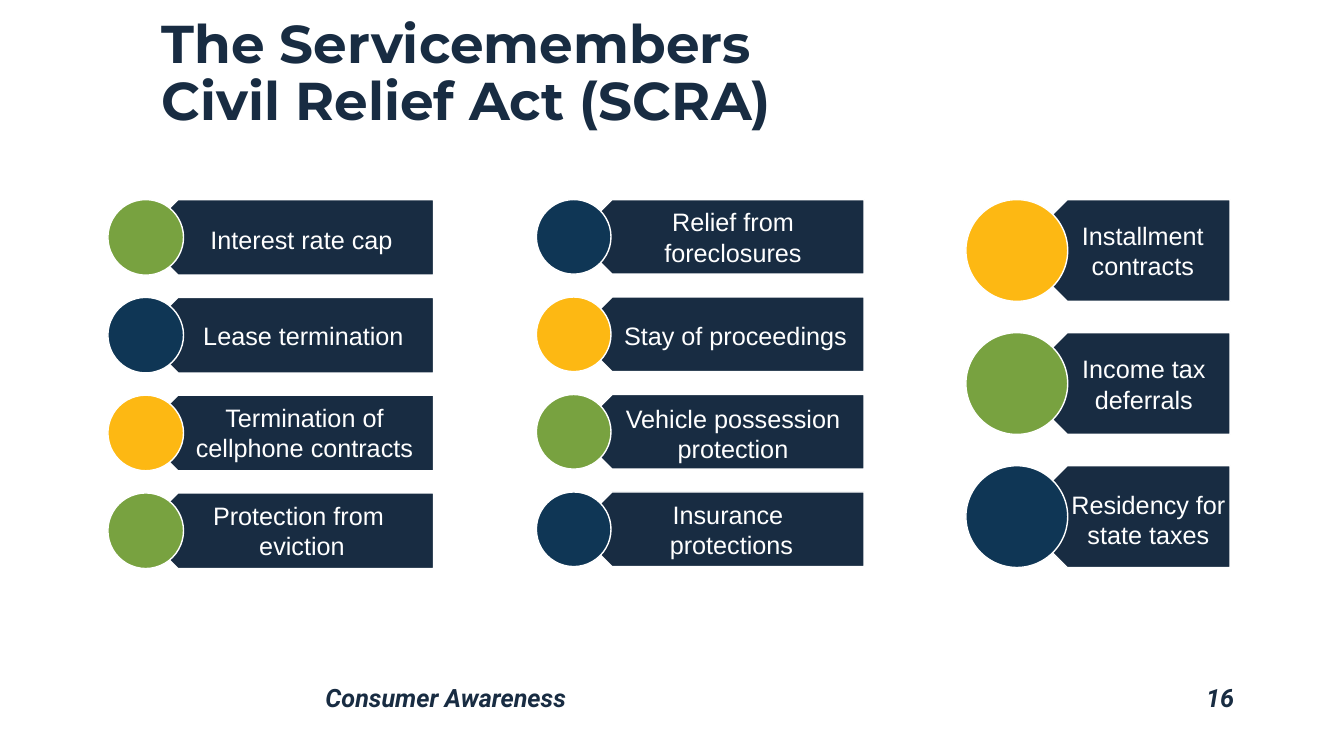
from pptx import Presentation
from pptx.dml.color import RGBColor
from pptx.enum.shapes import MSO_SHAPE
from pptx.enum.text import MSO_ANCHOR, MSO_AUTO_SIZE, PP_ALIGN
from pptx.util import Inches, Pt

NAVY, BLUE, GREEN, GOLD, WHITE = "182C42", "0F3655", "78A240", "FDB813", "FFFFFF"
TOP, MIDDLE = MSO_ANCHOR.TOP, MSO_ANCHOR.MIDDLE

# Content
TITLE = "The Servicemembers \vCivil Relief Act (SCRA)"
FOOTER = "Consumer Awareness"
PAGE_NUMBER = "16"
FIRST_ROW = 1.98

# Each protection: circle colour, label, label box (left, top, width, height), anchor
COLUMNS = [
    {"circle_left": 1.07, "circle": 0.75, "banner_left": 1.39, "banner_width": 2.91, "pitch": 0.97,
     "protections": [
         (GREEN, "Interest rate cap", (1.69, 2, 2.6, 0.75), MIDDLE),
         (BLUE, "Lease termination", (1.71, 2.95, 2.6, 0.75), MIDDLE),
         (GOLD, "Termination of cellphone contracts", (1.72, 3.94, 2.6, 0.75), TOP),
         (GREEN, "Protection from \neviction", (1.6, 4.89, 2.79, 0.75), MIDDLE)]},
    {"circle_left": 5.32, "circle": 0.74, "banner_left": 5.7, "banner_width": 2.87, "pitch": 0.967,
     "protections": [
         (BLUE, "Relief from foreclosures", (5.89, 2, 2.76, 0.75), TOP),
         (GOLD, "Stay of proceedings", (5.96, 3.13, 2.67, 0.52), TOP),
         (GREEN, "Vehicle possession protection", (5.97, 3.95, 2.6, 0.52), TOP),
         (BLUE, "Insurance \nprotections", (5.92, 4.9, 2.67, 0.76), TOP)]},
    {"circle_left": 9.58, "circle": 1.01, "banner_left": 10.08, "banner_width": 2.12, "pitch": 1.32,
     "protections": [
         (GOLD, "Installment contracts", (10.21, 1.98, 2.25, 1.01), MIDDLE),
         (GREEN, "Income tax deferrals", (10.21, 3.33, 2.27, 0.96), MIDDLE),
         (BLUE, "Residency for state taxes", (10.52, 4.66, 1.74, 0.99), MIDDLE)]},
]


def color(hex_string):
    return RGBColor.from_string(hex_string)


def write(holder, text, size, font, ink, align, anchor=TOP, bold=False, italic=False, spacing=None):
    frame = holder.text_frame
    frame.word_wrap = True
    frame.auto_size = MSO_AUTO_SIZE.NONE
    frame.vertical_anchor = anchor
    frame.text = text
    for paragraph in frame.paragraphs:
        paragraph.alignment = align
        paragraph.line_spacing = spacing
        paragraph.font.size = Pt(size)
        paragraph.font.name = font
        paragraph.font.color.rgb = color(ink)
        paragraph.font.bold = bold
        paragraph.font.italic = italic


def add_text(slide, box, *args, **style):
    write(slide.shapes.add_textbox(*map(Inches, box)), *args, **style)


def add_outlined(slide, preset, box, fill):
    shape = slide.shapes.add_shape(preset, *map(Inches, box))
    shape.shadow.inherit = False
    shape.fill.solid()
    shape.fill.fore_color.rgb = color(fill)
    shape.line.color.rgb = color(WHITE)
    shape.line.width = Pt(1)
    return shape


def main():
    deck = Presentation()
    deck.slide_width, deck.slide_height = Inches(13.33), Inches(7.5)
    slide = deck.slides.add_slide(deck.slide_layouts[5])

    # Title
    title = slide.shapes.title
    title.left, title.top, title.width, title.height = map(Inches, (1.5, 0.34, 11.44, 1.02))
    write(title, TITLE, 38, "Montserrat", NAVY, PP_ALIGN.LEFT, MSO_ANCHOR.BOTTOM, bold=True, spacing=0.9)

    # Footer and page number
    for text, box, align in [(FOOTER, (3.13, 6.75, 7.63, 0.38), PP_ALIGN.LEFT),
                             (PAGE_NUMBER, (10.76, 6.75, 1.58, 0.38), PP_ALIGN.RIGHT)]:
        add_text(slide, box, text, 18, "Roboto", NAVY, align, bold=True, italic=True, spacing=0.9)

    # Protections: banner pointing left, circle over its tip, label on top
    for column in COLUMNS:
        size = column["circle"]
        for row, (fill, label, label_box, anchor) in enumerate(column["protections"]):
            top = FIRST_ROW + row * column["pitch"]
            banner = add_outlined(slide, MSO_SHAPE.PENTAGON,
                                  (column["banner_left"], top, column["banner_width"], size), NAVY)
            banner.rotation = 180
            add_outlined(slide, MSO_SHAPE.OVAL, (column["circle_left"], top, size, size), fill)
            add_text(slide, label_box, label, 18, "Arial", WHITE, PP_ALIGN.CENTER, anchor)

    deck.save("out.pptx")


if __name__ == "__main__":
    main()
